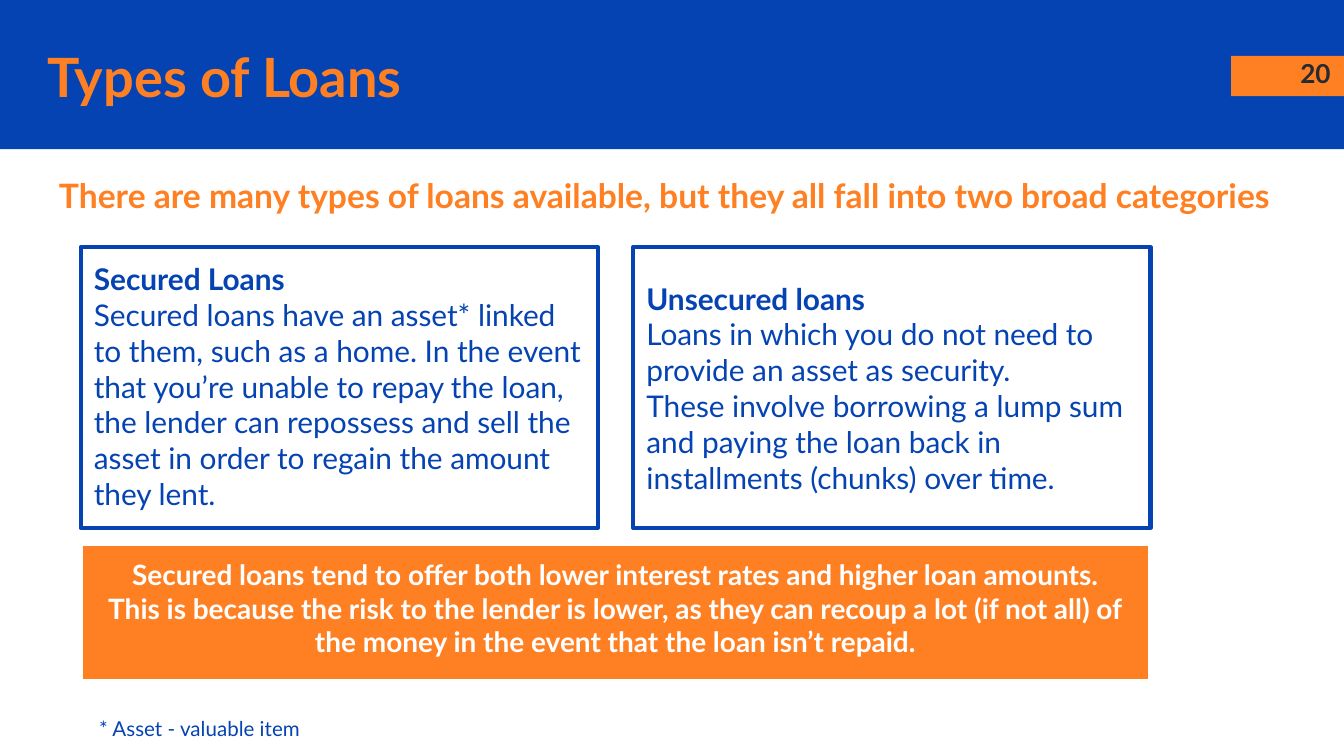
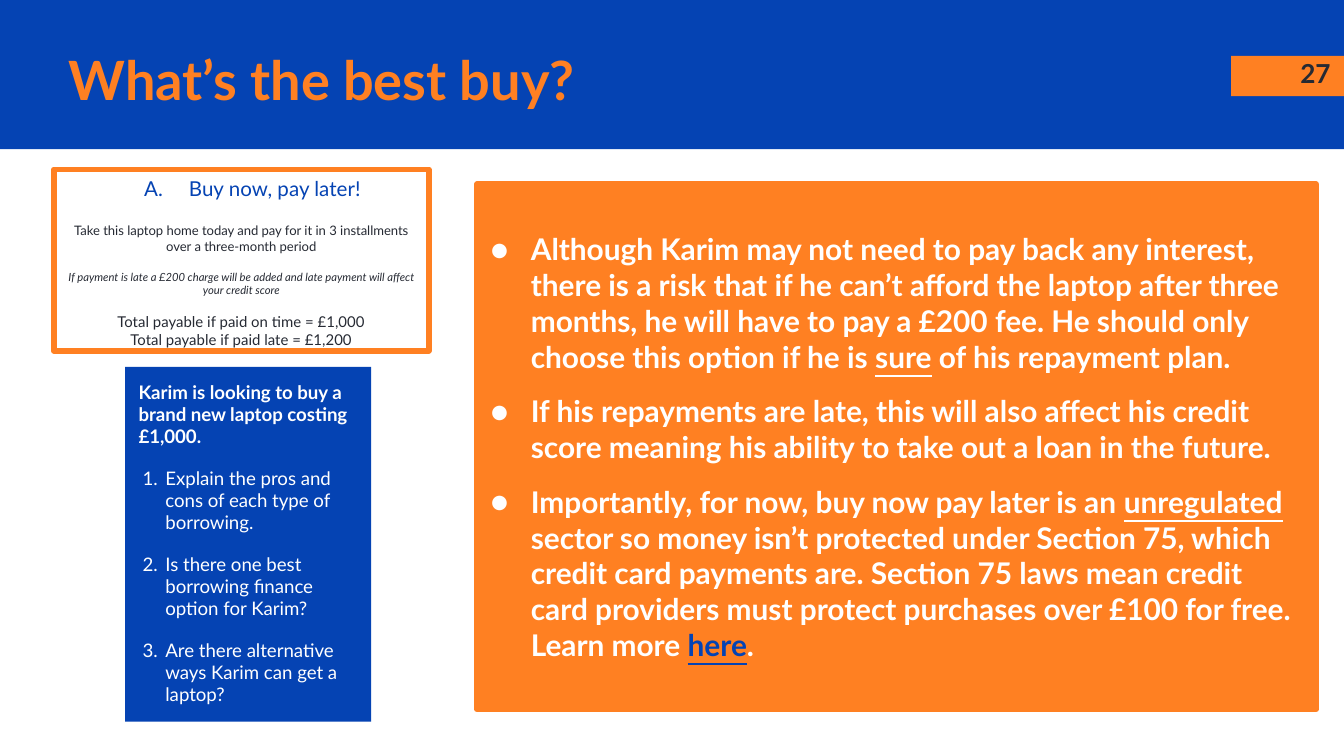
from lxml.etree import SubElement
from pptx import Presentation
from pptx.dml.color import RGBColor
from pptx.enum.shapes import MSO_SHAPE as Preset
from pptx.enum.text import MSO_ANCHOR as Anchor, MSO_AUTO_SIZE as AutoSize, PP_ALIGN as Align
from pptx.oxml.ns import qn
from pptx.util import Pt

BLUE = "0543B3"
ORANGE = "FF8022"
WHITE = "FFFFFF"
INK = "262A33"
FONT = "Lato"

SLIDE_WIDTH, SLIDE_HEIGHT = 720, 405
BAND_HEIGHT = 80
CONTENT_LEFT, CONTENT_WIDTH = 43.2, 573.2
CATEGORY_GAP = 18.8
INSET = 7.2

TITLE_ONLY, TWO_CONTENT = 5, 3


def rgb(hex_color):
    return RGBColor.from_string(hex_color)


def set_all(target, values):
    for name, value in values.items():
        setattr(target, name, value)


def place(element, box):
    set_all(element, dict(zip(("left", "top", "width", "height"), map(Pt, box))))


def para(*runs, marker=None, **layout):
    return {"runs": runs, "marker": marker, "layout": layout}


def marker(kind, value, color, margin, hanging):
    return {"kind": kind, "value": value, "color": color,
            "margin": margin, "hanging": hanging}


def add_marker(paragraph, mark):
    properties = paragraph._p.get_or_add_pPr()
    margin, hanging = (mark["margin"], mark["hanging"]) if mark else (0, 0)
    properties.set("marL", str(Pt(margin)))
    properties.set("indent", str(Pt(-hanging)))
    if not mark:
        SubElement(properties, qn("a:buNone"))
        return
    color = SubElement(properties, qn("a:buClr"))
    SubElement(color, qn("a:srgbClr"), val=mark["color"])
    SubElement(properties, qn("a:buFont"), typeface=FONT)
    attribute = "char" if mark["kind"] == "buChar" else "type"
    SubElement(properties, qn("a:" + mark["kind"]), {attribute: mark["value"]})


def add_run(paragraph, text, color, **font):
    run = paragraph.add_run()
    run.text = text
    set_all(run.font, {"name": FONT, **font})
    run.font.color.rgb = rgb(color)


def write(element, paragraphs, font, **frame_format):
    frame = element.text_frame
    margins = {f"margin_{side}": Pt(INSET) for side in ("left", "top", "right", "bottom")}
    set_all(frame, {"word_wrap": True, "auto_size": AutoSize.NONE,
                    "vertical_anchor": Anchor.TOP, **margins, **frame_format})
    for index, content in enumerate(paragraphs):
        paragraph = frame.add_paragraph() if index else frame.paragraphs[0]
        add_marker(paragraph, content["marker"])
        set_all(paragraph, {"alignment": Align.LEFT, "space_before": Pt(0),
                            **content["layout"]})
        for run in content["runs"]:
            text, changes = (run, {}) if isinstance(run, str) else run
            add_run(paragraph, text, **{**font, **changes})


def paint(box, fill=None, line=None, weight=0):
    box.shadow.inherit = False
    if fill:
        box.fill.solid()
        box.fill.fore_color.rgb = rgb(fill)
    else:
        box.fill.background()
    if line:
        box.line.color.rgb = rgb(line)
        box.line.width = Pt(weight)
    else:
        box.line.fill.background()


def add_box(slide, position, **look):
    box = slide.shapes.add_shape(Preset.RECTANGLE, *map(Pt, position))
    paint(box, **look)
    return box


def add_label(slide, position, text, font, **layout):
    label = slide.shapes.add_textbox(*map(Pt, position))
    write(label, [para(text, **layout)], font)


def add_headed_slide(deck, layout, title, title_position, number):
    slide = deck.slides.add_slide(deck.slide_layouts[layout])
    band = add_box(slide, (0, 0, SLIDE_WIDTH, BAND_HEIGHT), fill=BLUE)
    number_tag = add_box(slide, (659.5, 30, 60.5, 21.6), fill=ORANGE)
    tree = slide.shapes._spTree
    for depth, backdrop in enumerate((band, number_tag), start=2):
        tree.insert(depth, backdrop._element)
    place(slide.shapes.title, title_position)
    write(slide.shapes.title, [para(title)],
          {"size": Pt(29), "color": ORANGE, "bold": True},
          vertical_anchor=Anchor.MIDDLE, margin_top=0, margin_bottom=0)
    add_label(slide, (676.8, 23.8, 43.2, 31), number,
              {"size": Pt(14), "color": INK, "bold": True}, alignment=Align.RIGHT)
    return slide


def add_category(slide, column, heading, lines, anchor):
    width = (CONTENT_WIDTH - CATEGORY_GAP) / 2
    left = CONTENT_LEFT + column * (width + CATEGORY_GAP)
    category = add_box(slide, (left, 132.5, width, 150.4), line=BLUE, weight=2.25)
    write(category, [para((heading, {"bold": True})), *map(para, lines)],
          {"size": Pt(16), "color": BLUE}, vertical_anchor=anchor)


def add_list(slide, index, position, paragraphs, font, look, **frame_format):
    listing = slide.placeholders[index]
    place(listing, position)
    paint(listing, **look)
    write(listing, paragraphs, font, **frame_format)


def build_loan_types(deck):
    slide = add_headed_slide(deck, TITLE_ONLY, "Types of Loans", (18, 20.5, 449, 40), "20")
    add_label(slide, (24.5, 86.4, 672, 36),
              "There are many types of loans available, but they all fall into two broad categories",
              {"size": Pt(18), "color": ORANGE, "bold": True})
    add_category(slide, 0, "Secured Loans", [
        "Secured loans have an asset* linked to them, such as a home. In the event that "
        "you’re unable to repay the loan, the lender can repossess and sell the asset in "
        "order to regain the amount they lent.",
    ], Anchor.TOP)
    add_category(slide, 1, "Unsecured loans", [
        "Loans in which you do not need to provide an asset as security.",
        "These involve borrowing a lump sum and paying the loan back in installments "
        "(chunks) over time.",
    ], Anchor.MIDDLE)
    comparison = add_box(slide, (CONTENT_LEFT, 291.6, CONTENT_WIDTH, 73.4),
                         fill=ORANGE, line=WHITE, weight=2.25)
    write(comparison, [
        para("Secured loans tend to offer both lower interest rates and higher loan amounts.",
             alignment=Align.CENTER),
        para("This is because the risk to the lender is lower, as they can recoup a lot "
             "(if not all) of the money in the event that the loan isn’t repaid.",
             alignment=Align.CENTER),
    ], {"size": Pt(15), "color": WHITE, "bold": True})
    add_label(slide, (46, 376.6, 433.4, 28), "* Asset - valuable item",
              {"size": Pt(11), "color": BLUE})


def add_offer(slide):
    offer = add_box(slide, (28.8, 90.7, 200.9, 97.2), fill=WHITE, line=ORANGE, weight=3)
    letter = marker("buAutoNum", "alphaUcPeriod", BLUE, 36, 24)
    terms = [
        ("Take this laptop home today and pay for it in 3 installments over a "
         "three-month period", 7, 12, False),
        ("If payment is late a £200 charge will be added and late payment will affect "
         "your credit score", 6, 8.4, True),
        ("Total payable if paid on time = £1,000", 8, 8.4, False),
        ("Total payable if paid late = £1,200", 8, 0, False),
    ]
    heading = para(("Buy now, pay later!", {"size": Pt(11), "color": BLUE}),
                   marker=letter, alignment=Align.CENTER)
    write(offer, [heading] + [
        para((text, {"size": Pt(size), "italic": italic}),
             alignment=Align.CENTER, space_before=Pt(gap))
        for text, size, gap, italic in terms
    ], {"color": INK}, vertical_anchor=Anchor.MIDDLE, margin_top=Pt(2), margin_bottom=0)


def build_best_buy(deck):
    slide = add_headed_slide(deck, TWO_CONTENT, "What’s the best buy?",
                             (29.5, 22.5, 563.8, 40), "27")
    underlined = {"underline": True}
    advice = [
        ("Although Karim may not need to pay back any interest, there is a risk that if he "
         "can’t afford the laptop after three months, he will have to pay a £200 fee. He "
         "should only choose this option if he is ",
         ("sure", underlined), " of his repayment plan."),
        ("If his repayments are late, this will also affect his credit score meaning his "
         "ability to take out a loan in the future.",),
        ("Importantly, for now, buy now pay later is an ", ("unregulated", underlined),
         " sector so money isn’t protected under Section 75, which credit card payments "
         "are. Section 75 laws mean credit card providers must protect purchases over £100 "
         "for free. Learn more ", ("here", {**underlined, "color": BLUE}), "."),
    ]
    dot = marker("buChar", "●", WHITE, 21.6, 24.5)
    add_list(slide, 1, (255.6, 98.6, 449.3, 281.5), [
        para(*runs, marker=dot, space_before=Pt(10 if index else 0))
        for index, runs in enumerate(advice)
    ], {"size": Pt(16), "color": WHITE, "bold": True},
        {"fill": ORANGE, "line": ORANGE, "weight": 3}, vertical_anchor=Anchor.MIDDLE)

    add_offer(slide)

    questions = [
        "Explain the pros and cons of each type of borrowing.",
        "Is there one best borrowing finance option for Karim?",
        "Are there alternative ways Karim can get a laptop?",
    ]
    numeral = marker("buAutoNum", "arabicPeriod", WHITE, 14.4, 12.2)
    task = para(("Karim is looking to buy a brand new laptop costing £1,000.", {"bold": True}))
    add_list(slide, 2, (67, 196.6, 131.8, 190), [task] + [
        para(question, marker=numeral, space_before=Pt(10)) for question in questions
    ], {"size": Pt(10), "color": WHITE}, {"fill": BLUE})


def main():
    deck = Presentation()
    set_all(deck, {"slide_width": Pt(SLIDE_WIDTH), "slide_height": Pt(SLIDE_HEIGHT)})
    build_loan_types(deck)
    build_best_buy(deck)
    deck.save("out.pptx")


if __name__ == "__main__":
    main()
